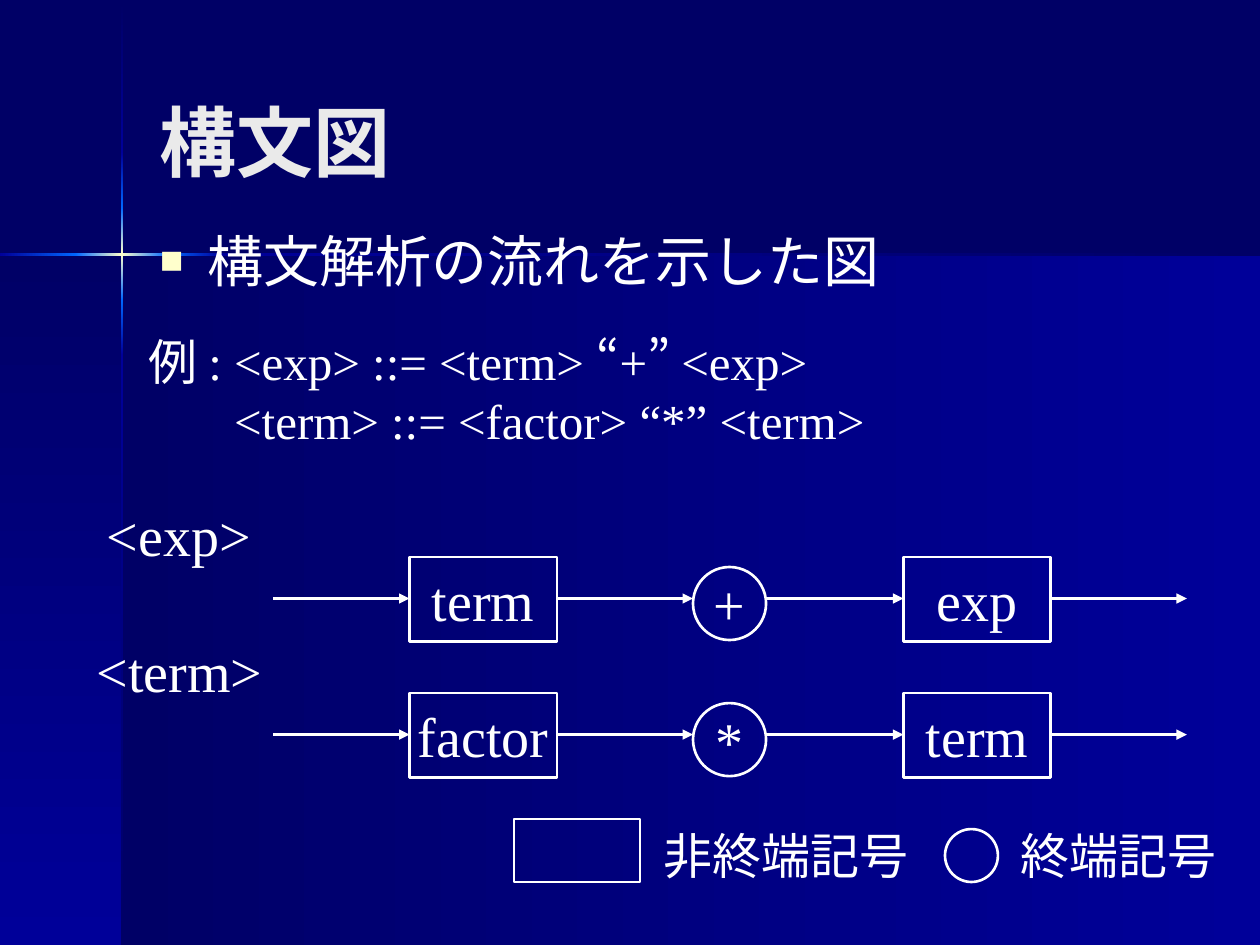
from dataclasses import dataclass
import copy

import pptx
import pptx.dml.color
import pptx.enum.lang
import pptx.enum.shapes
import pptx.enum.text
import pptx.oxml
import pptx.oxml.ns
import pptx.util
from pptx.util import Inches

COLORS = {"dark": "000066", "navy": "000099", "glow": "0066FF",
          "cream": "FFFFCC", "title": "EAEAEA", "white": "FFFFFF"}
FONT = "Times New Roman"
RECT = pptx.enum.shapes.MSO_SHAPE.RECTANGLE
OVAL = pptx.enum.shapes.MSO_SHAPE.OVAL
ALIGN = pptx.enum.text.PP_ALIGN
ANCHOR = pptx.enum.text.MSO_ANCHOR
DOWN, RIGHT = 270, 0


@dataclass
class Band:
    x: float
    y: float
    w: float
    h: float
    angle: int
    stops: tuple[str, ...]


@dataclass
class Label:
    text: str
    x: float
    y: float
    w: float
    h: float
    size: int = 32
    color: str = "white"
    bold: bool = False
    wrap: bool = False
    anchor: ANCHOR = ANCHOR.TOP
    align: ALIGN = ALIGN.LEFT


@dataclass
class Rule:
    y: float
    symbols: tuple[str, str, str]


# Background panels and the shining cross
BANDS = [
    Band(0.97, 2.02, 9.03, 5.48, RIGHT, ("dark", "navy")),
    Band(0, 2.02, 0.97, 5.48, DOWN, ("dark", "navy")),
    Band(0.96, 0.01, 0.02, 1.2, DOWN, ("dark", "navy")),
    Band(0.96, 2.82, 0.02, 4.68, DOWN, ("navy", "dark")),
    Band(1.77, 2.01, 8.23, 0.02, RIGHT, ("navy", "dark")),
    Band(0.96, 2.38, 0.02, 0.44, DOWN, ("glow", "navy")),
    Band(0.96, 1.21, 0.02, 0.44, DOWN, ("navy", "glow")),
    Band(0.96, 1.65, 0.02, 0.73, DOWN, ("glow", "cream", "glow")),
    Band(0, 2.01, 0.61, 0.02, RIGHT, ("navy", "glow")),
    Band(1.33, 2.01, 0.44, 0.02, RIGHT, ("glow", "navy")),
    Band(0.6, 2.01, 0.73, 0.02, RIGHT, ("glow", "cream", "glow")),
]
TITLE = Label("構文図", 1.17, 0.33, 8.25, 1.57, 44, "title", True, True, ANCHOR.MIDDLE)
BODY = Label("構文解析の流れを示した図", 1.17, 1.75, 8.25, 0.75, wrap=True)
EXAMPLE = Label("例 : <exp> ::= <term> “+” <exp>\n<term> ::= <factor> “*” <term>",
                1.08, 2.58, 5.89, 1.03, 28, wrap=True)
LABELS = [
    Label("<exp>", 0.73, 3.92, 1.38, 0.63, align=ALIGN.CENTER),
    Label("<term>", 0.67, 5, 1.52, 0.63),
    Label("非終端記号", 5.17, 6.5, 2.14, 0.57, 28),
    Label("終端記号", 8, 6.5, 1.75, 0.57, 28),
]
RULES = [Rule(4.75, ("term", "+", "exp")), Rule(5.83, ("factor", "*", "term"))]
# Kind, left, width, height and rise above the arrow line of each symbol
SYMBOLS = [(RECT, 3.25, 1.17, 0.67, 0.33), (OVAL, 5.5, 0.58, 0.58, 0.25),
           (RECT, 7.17, 1.17, 0.67, 0.33)]
LINE_START, LINE_END = 2.17, 9.42


def rgb(name: str) -> pptx.dml.color.RGBColor:
    return pptx.dml.color.RGBColor.from_string(COLORS[name])


def fill_text(shape, label: Label) -> None:
    tf = shape.text_frame
    tf.text = label.text
    tf.word_wrap = label.wrap
    tf.vertical_anchor = label.anchor
    for p in tf.paragraphs:
        p.alignment = label.align
        for r in p.runs:
            r.font.name = FONT
            r.font.size = pptx.util.Pt(label.size)
            r.font.bold = label.bold
            r.font.color.rgb = rgb(label.color)
            r.font.language_id = pptx.enum.lang.MSO_LANGUAGE_ID.JAPANESE


def add_label(s, label: Label):
    sp = s.shapes.add_textbox(*map(Inches, (label.x, label.y, label.w, label.h)))
    fill_text(sp, label)
    if not label.wrap:
        sp.text_frame.auto_size = pptx.enum.text.MSO_AUTO_SIZE.SHAPE_TO_FIT_TEXT
    return sp


def add_band(s, band: Band) -> None:
    sp = s.shapes.add_shape(RECT, *map(Inches, (band.x, band.y, band.w, band.h)))
    sp.shadow.inherit = False
    sp.line.fill.background()
    sp.fill.gradient()
    sp.fill.gradient_angle = band.angle
    if len(band.stops) == 3:
        stops = sp._element.spPr.find(".//" + pptx.oxml.ns.qn("a:gsLst"))
        stops.insert(1, copy.deepcopy(stops[0]))
    for i, (stop, name) in enumerate(zip(sp.fill.gradient_stops, band.stops)):
        stop.position = i / (len(band.stops) - 1)
        stop.color.rgb = rgb(name)


def add_symbol(s, kind, x: float, y: float, w: float, h: float, text: str = "") -> None:
    sp = s.shapes.add_shape(kind, *map(Inches, (x, y, w, h)))
    sp.shadow.inherit = False
    sp.fill.background()
    sp.line.color.rgb = rgb("white")
    sp.line.width = pptx.util.Pt(1.5)
    if text:
        fill_text(sp, Label(text, x, y, w, h, anchor=ANCHOR.MIDDLE, align=ALIGN.CENTER))


def add_arrow(s, x1: float, x2: float, y: float) -> None:
    line = s.shapes.add_connector(pptx.enum.shapes.MSO_CONNECTOR.STRAIGHT,
                                  *map(Inches, (x1, y, x2, y)))
    line.line.color.rgb = rgb("white")
    line.line.width = pptx.util.Pt(1.5)
    ns = pptx.oxml.ns.nsdecls("a")
    line.line._get_or_add_ln().append(
        pptx.oxml.parse_xml(f'<a:tailEnd {ns} type="triangle"/>'))
    line._element.spPr.append(pptx.oxml.parse_xml(f"<a:effectLst {ns}/>"))


def add_rule(s, rule: Rule) -> None:
    start = LINE_START
    for text, (kind, x, w, h, rise) in zip(rule.symbols, SYMBOLS):
        add_arrow(s, start, x, rule.y)
        add_symbol(s, kind, x, rule.y - rise, w, h, text)
        start = x + w
    add_arrow(s, start, LINE_END, rule.y)


def add_bullet(p) -> None:
    p.space_before = pptx.util.Pt(6.4)
    pPr = p._p.get_or_add_pPr()
    pPr.set("marL", str(Inches(0.38)))
    pPr.set("indent", str(Inches(-0.38)))
    ns = pptx.oxml.ns.nsdecls("a")
    for xml in (f'<a:buClr {ns}><a:srgbClr val="{COLORS["cream"]}"/></a:buClr>',
                f'<a:buSzPct {ns} val="70000"/>',
                f'<a:buFont {ns} typeface="{FONT}"/>',
                f'<a:buChar {ns} char="■"/>'):
        pPr.append(pptx.oxml.parse_xml(xml))


def main() -> None:
    prs = pptx.Presentation()
    prs.slide_width, prs.slide_height = Inches(10), Inches(7.5)
    s = prs.slides.add_slide(prs.slide_layouts[6])
    s.background.fill.solid()
    s.background.fill.fore_color.rgb = rgb("dark")
    for band in BANDS:
        add_band(s, band)

    # Title, bullet and grammar example
    add_label(s, TITLE)
    add_bullet(add_label(s, BODY).text_frame.paragraphs[0])
    second = add_label(s, EXAMPLE).text_frame.paragraphs[1]
    second._p.get_or_add_pPr().set("marL", str(Inches(0.68)))

    # Syntax diagrams and legend
    for rule in RULES:
        add_rule(s, rule)
    add_symbol(s, RECT, 4.08, 6.5, 1, 0.5)
    add_symbol(s, OVAL, 7.5, 6.58, 0.42, 0.42)
    for label in LABELS:
        add_label(s, label)
    prs.save("out.pptx")


if __name__ == "__main__":
    main()
